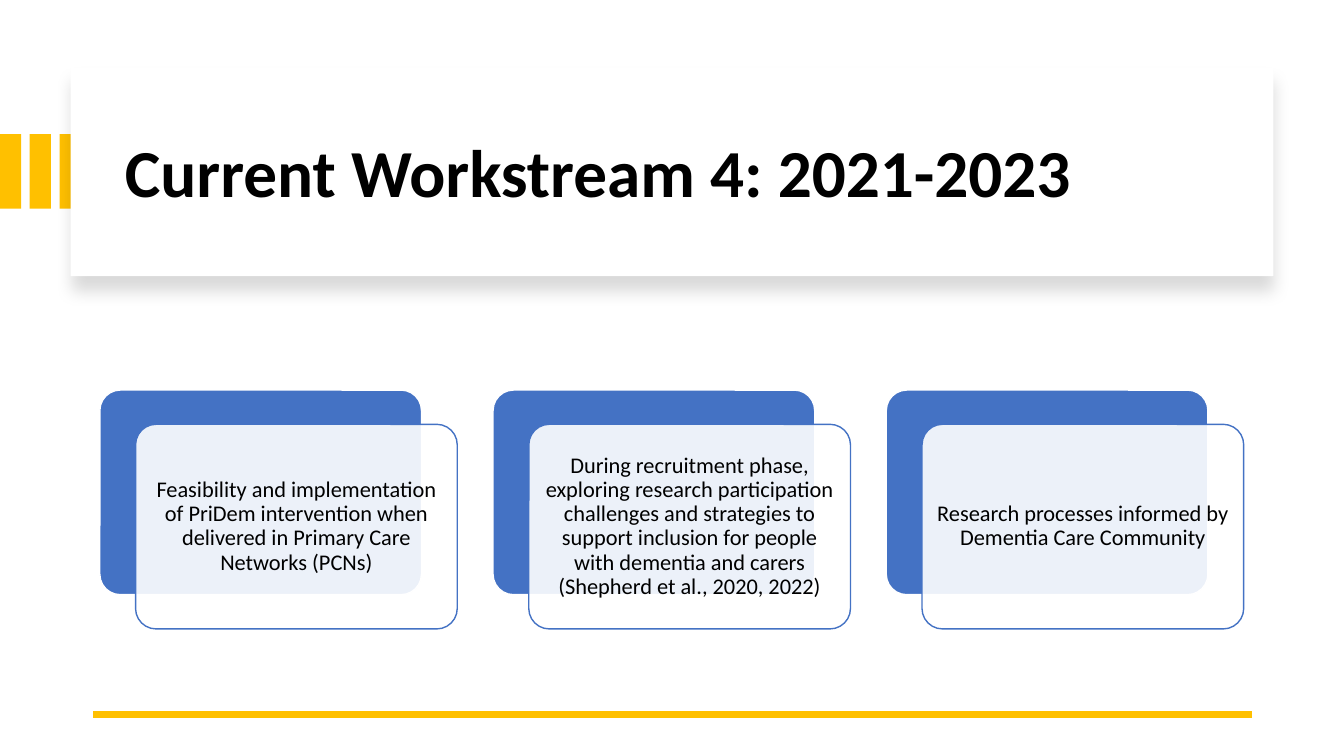
from lxml.etree import SubElement
from pptx import Presentation
from pptx.dml.color import RGBColor
from pptx.enum.shapes import MSO_CONNECTOR, MSO_SHAPE
from pptx.enum.text import MSO_ANCHOR, PP_ALIGN
from pptx.oxml.ns import qn
from pptx.util import Inches, Pt

FONT = "Calibri"
GOLD, BLUE, WHITE, BLACK = "FFC000", "4472C4", "FFFFFF", "000000"
CARD_WIDTH, CARD_HEIGHT = 3.19, 2.03
CARD_LEFT, CARD_TOP, CARD_STEP = 0.99, 3.87, 3.9
FRONT_SHIFT_X, FRONT_SHIFT_Y = 0.355, 0.34
CARD_TEXTS = [
    "Feasibility and implementation of PriDem intervention when delivered in Primary Care Networks (PCNs)",
    "During recruitment phase, exploring research participation challenges and strategies to support "
    "inclusion for people with dementia and carers (Shepherd et al., 2020, 2022)",
    "Research processes informed by Dementia Care Community",
]


def rgb(color):
    return RGBColor.from_string(color)


def add_panel(slide, left, top, width, height, fill, line=None, kind=MSO_SHAPE.RECTANGLE):
    panel = slide.shapes.add_shape(kind, Inches(left), Inches(top), Inches(width), Inches(height))
    panel.shadow.inherit = False
    panel.fill.solid()
    panel.fill.fore_color.rgb = rgb(fill)
    if line:
        panel.line.color.rgb = rgb(line)
        panel.line.width = Pt(1)
    else:
        panel.line.fill.background()
    return panel


def set_opacity(shape, percent):
    color = shape.fill._xPr.find(qn("a:solidFill"))[0]
    SubElement(color, qn("a:alpha"), val=str(percent * 1000))


def add_soft_shadow(shape):
    effects = shape.fill._xPr.find(qn("a:effectLst"))
    shadow = SubElement(effects, qn("a:outerShdw"), blurRad=str(Pt(11)), dist=str(Pt(10)),
                        dir="5400000", algn="t", rotWithShape="0")
    color = SubElement(shadow, qn("a:srgbClr"), val=BLACK)
    SubElement(color, qn("a:alpha"), val="15000")


def write(shape, text, size, align, bold=False):
    frame = shape.text_frame
    frame.word_wrap = True
    frame.vertical_anchor = MSO_ANCHOR.MIDDLE
    frame.text = text
    para = frame.paragraphs[0]
    para.alignment = align
    para.line_spacing = 0.9
    font = para.runs[0].font
    font.name, font.size, font.bold = FONT, Pt(size), bold
    font.color.rgb = rgb(BLACK)


def add_title(slide, text):
    for stripe in range(3):
        add_panel(slide, 0.295 * stripe, 1.33, 0.21, 0.74, GOLD)
    add_soft_shadow(add_panel(slide, 0.7, 0.67, 11.93, 2.07, WHITE))
    box = slide.shapes.add_textbox(Inches(1.14), Inches(0.89), Inches(11.13), Inches(1.7))
    write(box, text, 48, PP_ALIGN.LEFT, bold=True)


def add_rule(slide):
    rule = slide.shapes.add_connector(
        MSO_CONNECTOR.STRAIGHT, Inches(12.42), Inches(7.09), Inches(0.92), Inches(7.09))
    rule.line.color.rgb = rgb(GOLD)
    rule.line.width = Pt(4.5)
    SubElement(rule.line._ln.getparent(), qn("a:effectLst"))


def add_card(slide, left, text):
    """Add a blue card with a translucent white text card shifted in front of it."""
    back = add_panel(slide, left, CARD_TOP, CARD_WIDTH, CARD_HEIGHT, BLUE, WHITE,
                     MSO_SHAPE.ROUNDED_RECTANGLE)
    front = add_panel(slide, left + FRONT_SHIFT_X, CARD_TOP + FRONT_SHIFT_Y, CARD_WIDTH,
                      CARD_HEIGHT, WHITE, BLUE, MSO_SHAPE.ROUNDED_RECTANGLE)
    for card in (back, front):
        card.adjustments[0] = 0.1
    set_opacity(front, 90)
    frame = front.text_frame
    # The rounded corners already inset the text by about 0.06 inch.
    frame.margin_left = frame.margin_right = Inches(0.07)
    frame.margin_top = frame.margin_bottom = Inches(0.07)
    write(front, text, 16, PP_ALIGN.CENTER)


def main():
    deck = Presentation()
    deck.slide_width, deck.slide_height = Inches(13.33), Inches(7.5)
    slide = deck.slides.add_slide(deck.slide_layouts[6])
    add_title(slide, "Current Workstream 4: 2021-2023")
    add_rule(slide)
    for index, text in enumerate(CARD_TEXTS):
        add_card(slide, CARD_LEFT + CARD_STEP * index, text)
    deck.save("out.pptx")


if __name__ == "__main__":
    main()
